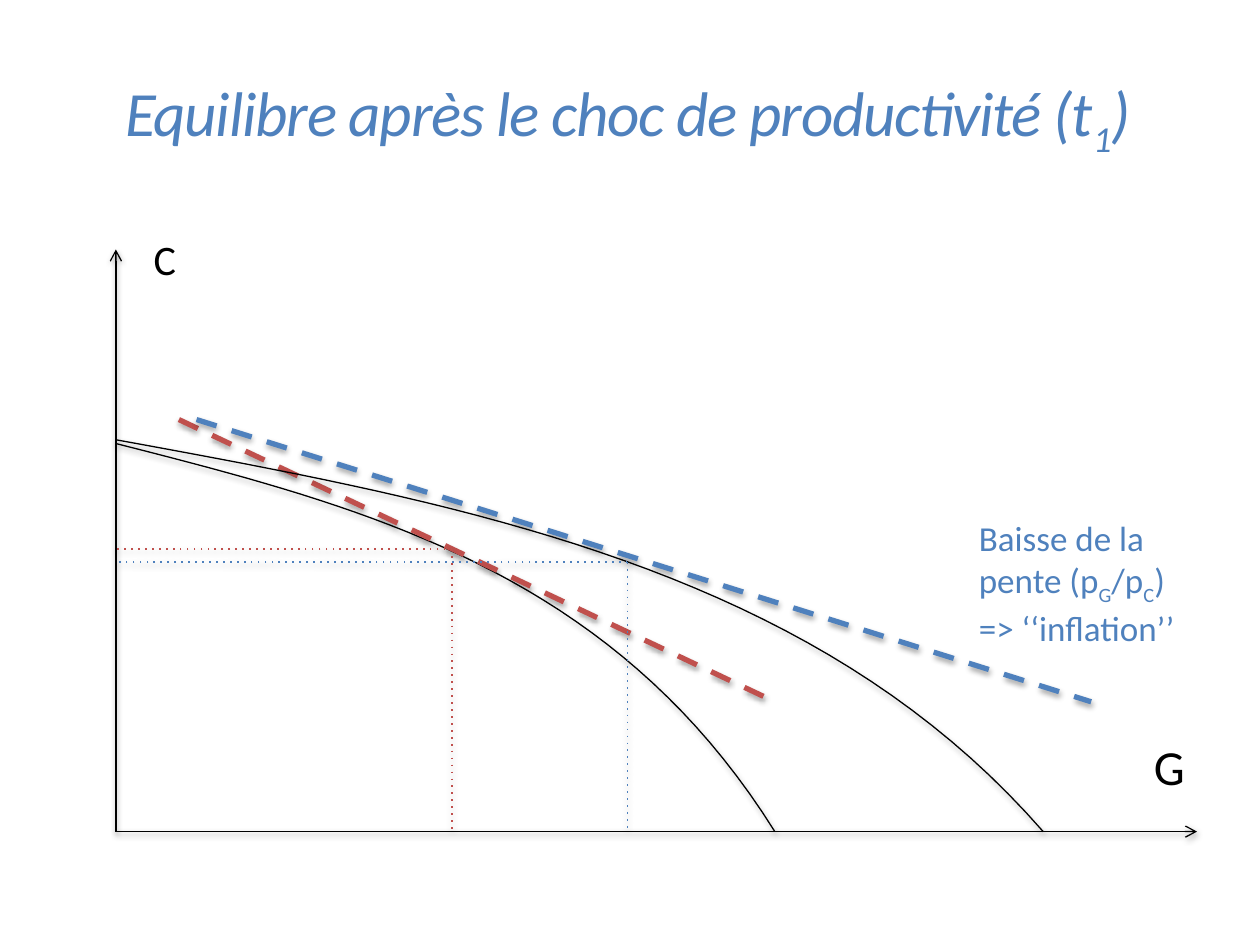
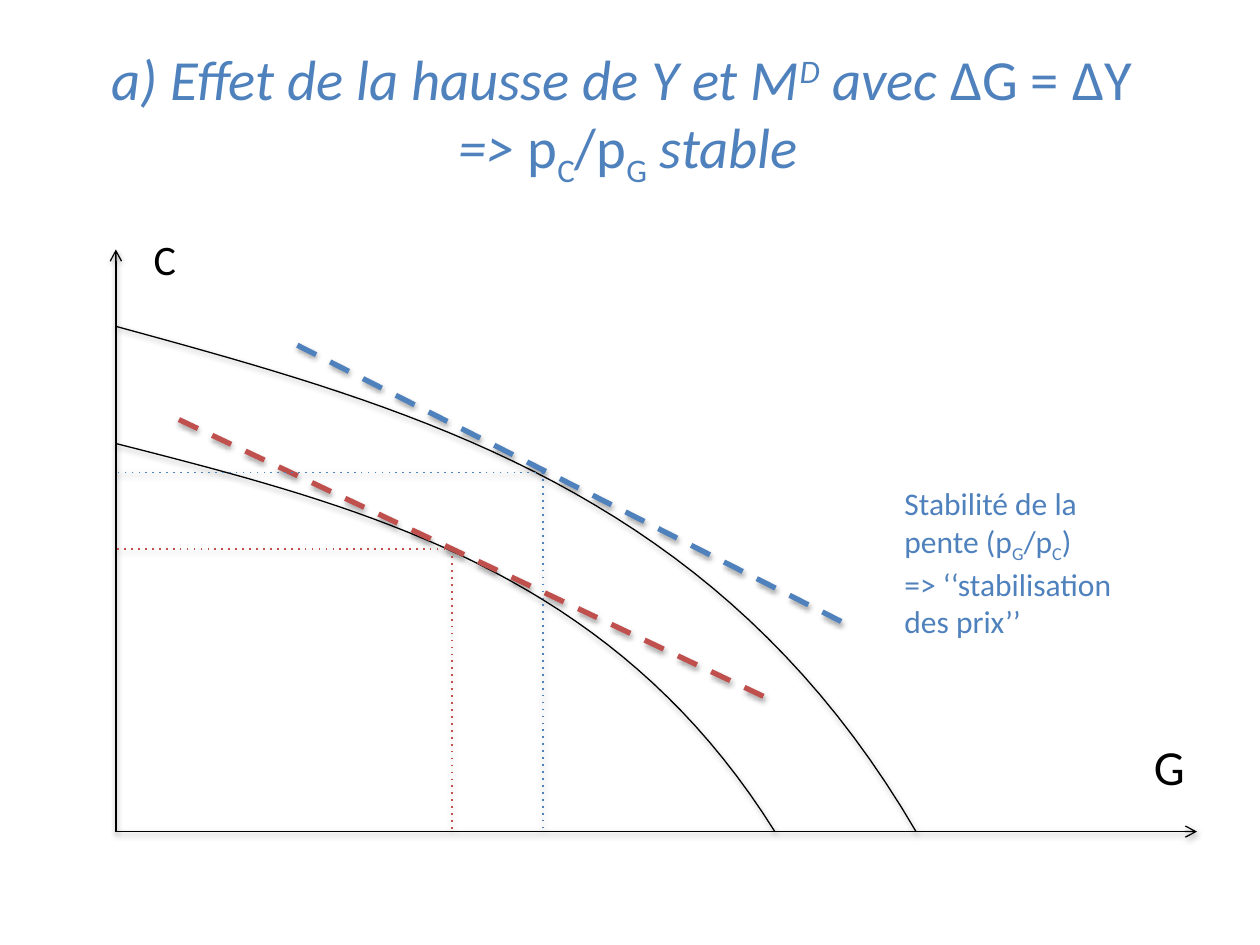
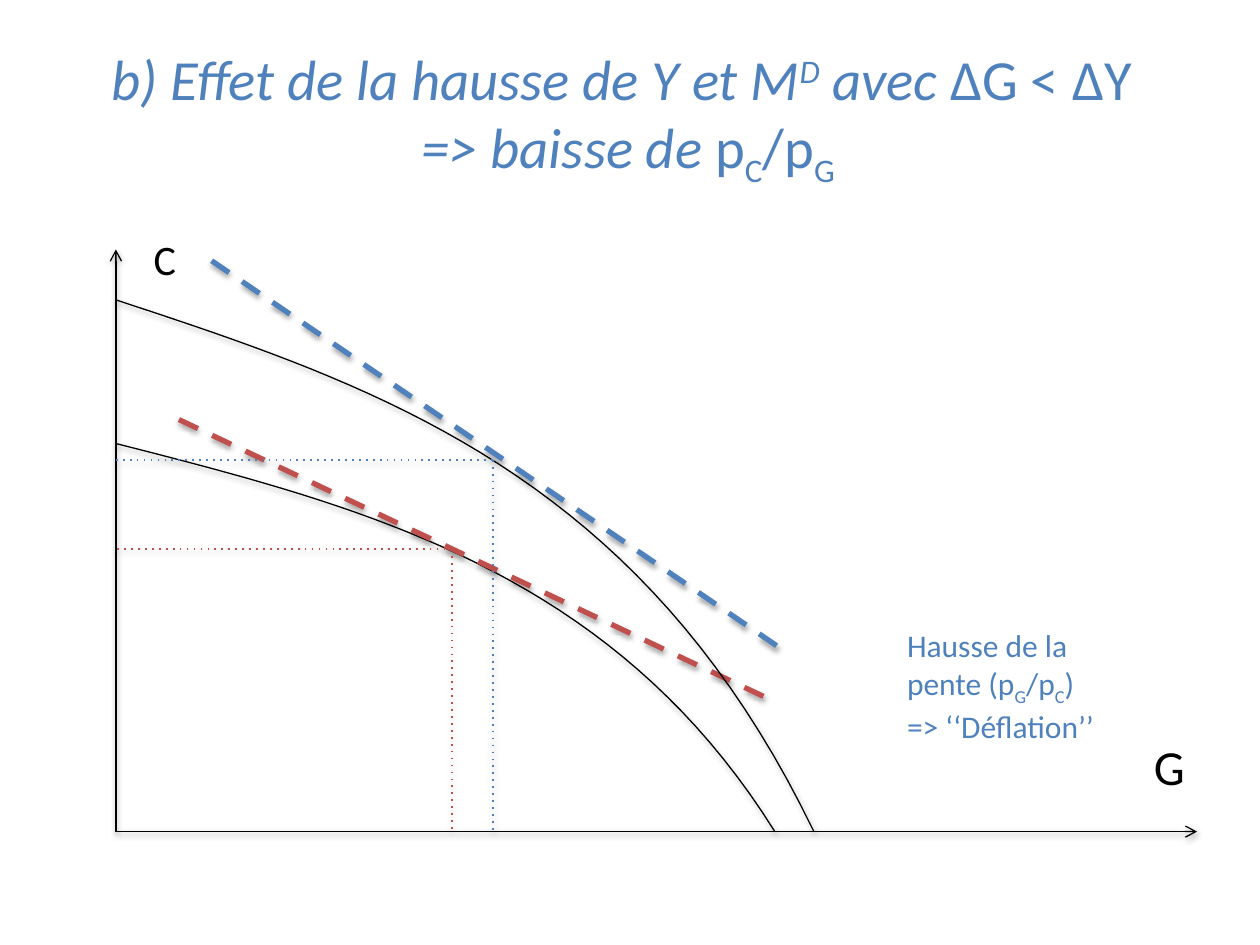
"""Builds three slides on the C and G production frontier."""
from lxml import etree
from pptx import Presentation
from pptx.dml.color import RGBColor
from pptx.enum.shapes import MSO_CONNECTOR
from pptx.enum.text import MSO_ANCHOR, MSO_AUTO_SIZE, PP_ALIGN
from pptx.oxml.ns import qn
from pptx.util import Pt

PX = 9144
STRAIGHT = MSO_CONNECTOR.STRAIGHT
MIDDLE = MSO_ANCHOR.MIDDLE
GROW, FIXED = MSO_AUTO_SIZE.SHAPE_TO_FIT_TEXT, MSO_AUTO_SIZE.NONE
LEFT, CENTER = PP_ALIGN.LEFT, PP_ALIGN.CENTER
BLACK, BLUE, RED = "000000", "4F81BD", "C0504D"
BASES = {"_": "-25000", "^": "30000"}
ORIGIN = (92, 660)
STEPS = 40


def color(code):
    """Turn a hex string into a colour."""
    return RGBColor.from_string(code)


def add(parent, tag, **attrs):
    """Append one drawing element and return it."""
    return etree.SubElement(parent, qn("a:" + tag), attrs)


def write(frame, lines, size=18, ink=BLACK, italic=False, align=LEFT, track=None):
    """Fill a frame; | splits runs, _ and ^ set the base, ~ flips italics."""
    for row, line in enumerate(lines):
        para = frame.add_paragraph() if row else frame.paragraphs[0]
        para.alignment = align
        slant = italic
        for part in line.split("|"):
            if part == "\n":
                para.add_line_break()
                continue
            if part[0] == "~":
                slant, part = not slant, part[1:]
            run = para.add_run()
            props = run._r.get_or_add_rPr()
            if part[0] in BASES:
                props.set("baseline", BASES[part[0]])
                part = part[1:]
            if track:
                props.set("spc", str(track))
            run.text = part
            font = run.font
            font.name, font.size, font.italic = "Calibri", Pt(size), slant
            font.color.rgb = color(ink)


class Deck:
    """Holds the shared style and the current slide."""

    def __init__(self):
        """Start an empty deck."""
        self.prs = Presentation()
        self.prs.slide_width, self.prs.slide_height = 1000 * PX, 750 * PX
        self.slide = None

    def place(self, shape, left, top, width, height):
        """Move and size a shape in px."""
        shape.left, shape.top = left * PX, top * PX
        shape.width, shape.height = width * PX, height * PX

    def start(self, title, size, track=None):
        """Add a slide with its title and the label of the C axis."""
        self.slide = self.prs.slides.add_slide(self.prs.slide_layouts[1])
        head, body = self.slide.placeholders
        self.place(head, 23, 30, 951, 125)
        frame = head.text_frame
        frame.auto_size, frame.vertical_anchor = FIXED, MIDDLE
        write(frame, [title], size, BLUE, True, CENTER, track)
        self.place(body, 50, 175, 877, 528)
        frame = body.text_frame
        frame.margin_top = 10 * PX
        para = frame.paragraphs[0]
        para.level, para.space_before = 1, Pt(0)
        props = para._p.get_or_add_pPr()
        props.set("marL", str(62 * PX))
        props.set("indent", "0")
        add(props, "buNone")
        write(frame, ["C"], 24)

    def style(self, shape, ink, width, dash=None, arrow=False):
        """Give a line its colour, width, dash, arrowhead and shadow."""
        shape.line.color.rgb = color(ink)
        shape.line.width = Pt(width)
        props = shape._element.spPr
        stroke = props.find(qn("a:ln"))
        if dash:
            add(stroke, "prstDash", val=dash)
        if arrow:
            add(stroke, "tailEnd", type="arrow")
        shade = add(add(props, "effectLst"), "outerShdw", blurRad="40000",
                    dist="20000", dir="5400000", rotWithShape="0")
        add(add(shade, "srgbClr", val=BLACK), "alpha", val="38000")

    def line(self, start, end, ink=BLACK, width=0.75, **kind):
        """Draw a straight line."""
        ends = [value * PX for value in (*start, *end)]
        self.style(self.slide.shapes.add_connector(STRAIGHT, *ends), ink, width, **kind)

    def curve(self, top, right):
        """Draw a frontier from the C axis to the G axis."""
        left, base = ORIGIN
        points = []
        for step in range(STEPS + 1):
            t = step / STEPS
            near, far = 3 * t * (1 - t) ** 2, 3 * t * t * (1 - t)
            across = 0.376 * near + 0.752 * far + t ** 3
            down = 0.163 * near + 0.326 * far + t ** 3
            points.append(((left + (right - left) * across) * PX,
                           (top + (base - top) * down) * PX))
        path = self.slide.shapes.build_freeform(*points[0])
        path.add_line_segments(points[1:], close=False)
        shape = path.convert_to_shape()
        shape.fill.background()
        self.style(shape, BLACK, 0.75)

    def box(self, area, lines, size, ink=BLACK):
        """Add a text box."""
        frame = self.slide.shapes.add_textbox(*[v * PX for v in area]).text_frame
        frame.word_wrap, frame.auto_size = True, GROW
        write(frame, lines, size, ink)

    def graph(self, curve, slope, point):
        """Draw the axes and the frontiers before and after the change."""
        left, base = ORIGIN
        for end in ((950, base), (left, 198)):
            self.line(ORIGIN, end, arrow=True)
        self.curve(352, 615)
        self.line((142, 333), (615, 557), RED, 3, dash="dash")
        self.curve(*curve)
        self.line(*slope, BLUE, 3, dash="dash")
        self.box((906, 580, 42, 57), ["G"], 28)
        for spot, ink in (((359, 436), RED), (point, BLUE)):
            for end in ((spot[0], base), (left, spot[1])):
                self.line(spot, end, ink, 1, dash="dot")


def main():
    """Build and save the deck."""
    effect = ") Effet de la hausse de Y et M|^D| avec |~ΔG "
    pente = "pente (p|_G|/p|_C|)"
    slides = [
        ("Equilibre après le choc de productivité (t|_1|)", 36, -70,
         (349, 828), ((156, 333), (866, 557)), (498, 446),
         (767, 405, 201, 111), ["Baisse de la " + pente, "=> ‘‘inflation’’"], 20),
        ("a" + effect + "= ΔY |\n|~=> |~p|_C|/p|_G|~ stable", 32.4, None,
         (259, 727), ((236, 274), (677, 498)), (431, 375),
         (708, 379, 200, 162),
         ["Stabilité de la " + pente, "=> ‘‘stabilisation des prix’’"], 18),
        ("b" + effect + "< ΔY |\n|~=> baisse de |~p|_C|/p|_G", 32.4, None,
         (238, 646), ((168, 207), (623, 517)), (391, 365),
         (710, 492, 192, 131), ["Hausse de la " + pente, "=> ‘‘Déflation’’"], 18),
    ]
    deck = Deck()
    for title, size, track, curve, slope, point, area, note, small in slides:
        deck.start(title, size, track)
        deck.graph(curve, slope, point)
        deck.box(area, note, small, BLUE)
    deck.prs.save("out.pptx")


if __name__ == "__main__":
    main()
